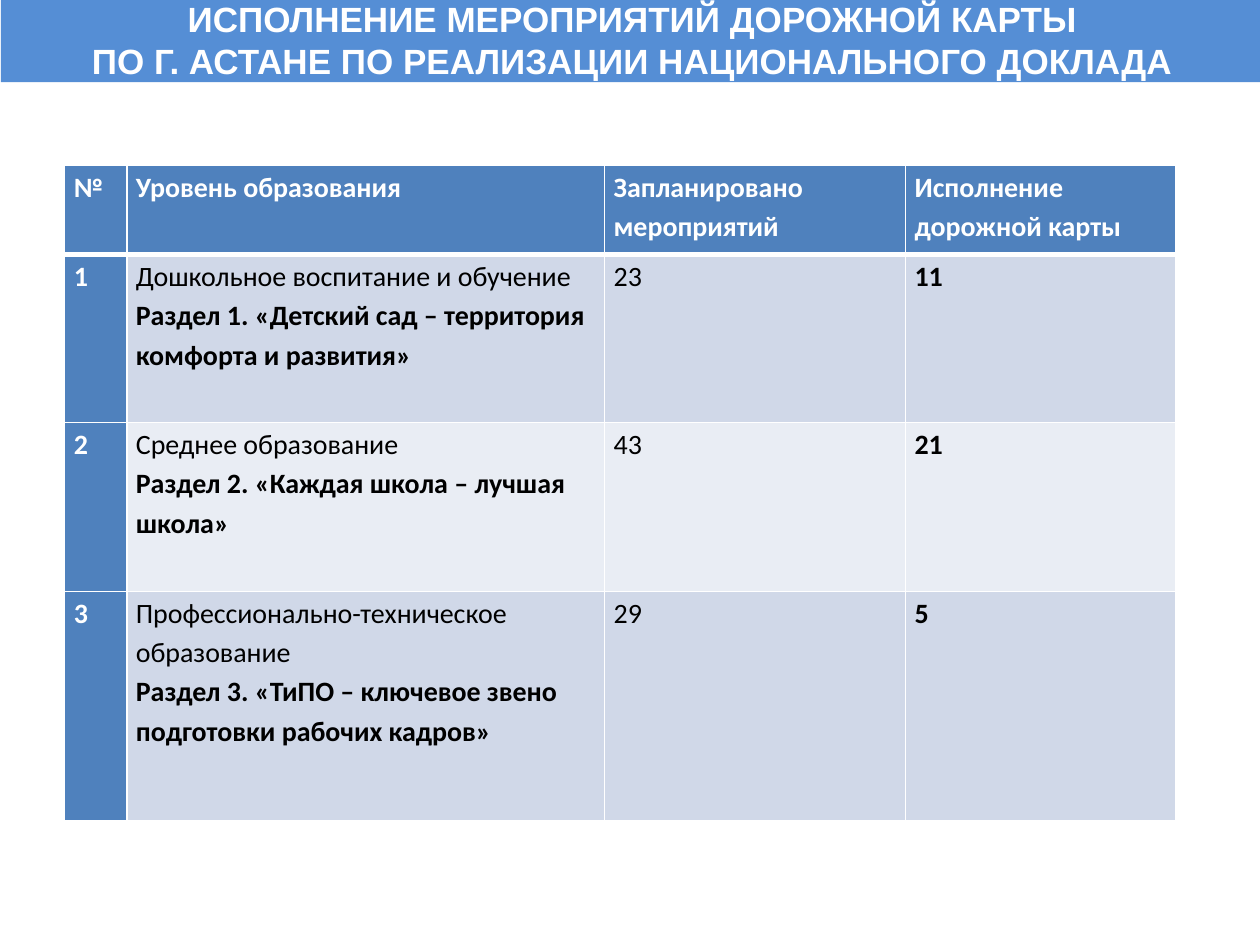
from lxml.etree import SubElement
from pptx import Presentation
from pptx.dml.color import RGBColor
from pptx.enum.shapes import MSO_SHAPE
from pptx.enum.text import MSO_ANCHOR, PP_ALIGN
from pptx.oxml.ns import qn
from pptx.util import Pt

WHITE, BLACK = "FFFFFF", "000000"
BANNER_BLUE, HEADER_BLUE = "558ED5", "4F81BD"
BANDS = ["D0D8E8", "E9EDF4"]

TITLE = [
    "ИСПОЛНЕНИЕ МЕРОПРИЯТИЙ ДОРОЖНОЙ КАРТЫ",
    "ПО Г. АСТАНЕ ПО РЕАЛИЗАЦИИ НАЦИОНАЛЬНОГО ДОКЛАДА",
]
HEADERS = ["№", "Уровень образования", "Запланировано мероприятий",
           "Исполнение дорожной карты"]
LEVELS = [
    ("Дошкольное воспитание и обучение",
     "Раздел 1. «Детский сад – территория комфорта и развития»", 23, 11),
    ("Среднее образование",
     "Раздел 2. «Каждая школа – лучшая школа»", 43, 21),
    ("Профессионально-техническое образование",
     "Раздел 3. «ТиПО – ключевое звено подготовки рабочих кадров»", 29, 5),
]
COLUMN_WIDTHS = [35.5, 273, 172, 154.5]
ROW_HEIGHTS = [51, 96, 96.5, 131]


def set_fill(target, color):
    target.fill.solid()
    target.fill.fore_color.rgb = RGBColor.from_string(color)


def add_run(paragraph, text, font, size, color, bold):
    run = paragraph.add_run()
    run.text = text
    run.font.name = font
    run.font.size = Pt(size)
    run.font.bold = bold
    run.font.color.rgb = RGBColor.from_string(color)


def set_borders(cell, color, top, bottom):
    """Draw all four cell edges; the sides are 1 pt wide."""
    properties = cell._tc.get_or_add_tcPr()
    for edge, width in (("L", 1), ("R", 1), ("T", top), ("B", bottom)):
        line = SubElement(properties, qn(f"a:ln{edge}"), w=str(Pt(width)))
        fill = SubElement(line, qn("a:solidFill"))
        SubElement(fill, qn("a:srgbClr"), val=color)


def fill_cell(cell, lines, fill, color):
    """Write (text, bold) lines as paragraphs on a coloured cell."""
    set_fill(cell, fill)
    cell.margin_left = cell.margin_right = Pt(5.2)
    cell.margin_top = cell.margin_bottom = Pt(0)
    cell.vertical_anchor = MSO_ANCHOR.TOP
    frame = cell.text_frame
    for index, (text, bold) in enumerate(lines):
        paragraph = frame.add_paragraph() if index else frame.paragraphs[0]
        paragraph.line_spacing = 1.15
        add_run(paragraph, text, "Calibri", 16, color, bold)


def add_banner(slide, left, top, width, height):
    shape = slide.shapes.add_shape(
        MSO_SHAPE.RECTANGLE, Pt(left), Pt(top), Pt(width), Pt(height))
    shape.shadow.inherit = False
    set_fill(shape, BANNER_BLUE)
    shape.line.fill.background()
    frame = shape.text_frame
    frame.word_wrap = True
    frame.vertical_anchor = MSO_ANCHOR.MIDDLE
    frame.margin_left = frame.margin_right = Pt(0)
    frame.margin_top = frame.margin_bottom = Pt(0)
    for index, text in enumerate(TITLE):
        paragraph = frame.add_paragraph() if index else frame.paragraphs[0]
        paragraph.alignment = PP_ALIGN.CENTER
        add_run(paragraph, text, "Arial", 20, WHITE, True)


def add_levels_table(slide, left, top, width, height):
    table = slide.shapes.add_table(
        len(ROW_HEIGHTS), len(COLUMN_WIDTHS),
        Pt(left), Pt(top), Pt(width), Pt(height)).table
    for column, share in zip(table.columns, COLUMN_WIDTHS):
        column.width = Pt(width * share / sum(COLUMN_WIDTHS))
    for row, share in zip(table.rows, ROW_HEIGHTS):
        row.height = Pt(height * share / sum(ROW_HEIGHTS))

    for row_index, row in enumerate(table.rows):
        for cell in row.cells:
            set_borders(cell, WHITE, top=3 if row_index == 1 else 1,
                        bottom=3 if row_index == 0 else 1)

    for column, text in enumerate(HEADERS):
        fill_cell(table.cell(0, column), [(text, True)], HEADER_BLUE, WHITE)
    for number, (level, section, planned, done) in enumerate(LEVELS, start=1):
        band = BANDS[(number - 1) % 2]
        fill_cell(table.cell(number, 0), [(str(number), True)],
                  HEADER_BLUE, WHITE)
        contents = [[(level, False), (section, True)],
                    [(str(planned), False)], [(str(done), True)]]
        for column, lines in enumerate(contents, start=1):
            fill_cell(table.cell(number, column), lines, band, BLACK)


def main():
    presentation = Presentation()
    presentation.slide_width = Pt(720)
    presentation.slide_height = Pt(540)
    slide = presentation.slides.add_slide(presentation.slide_layouts[6])
    add_banner(slide, left=0.5, top=-1.5, width=721.5, height=48.5)
    add_levels_table(slide, left=37, top=94.5, width=635, height=374.5)
    presentation.save("out.pptx")


if __name__ == "__main__":
    main()
